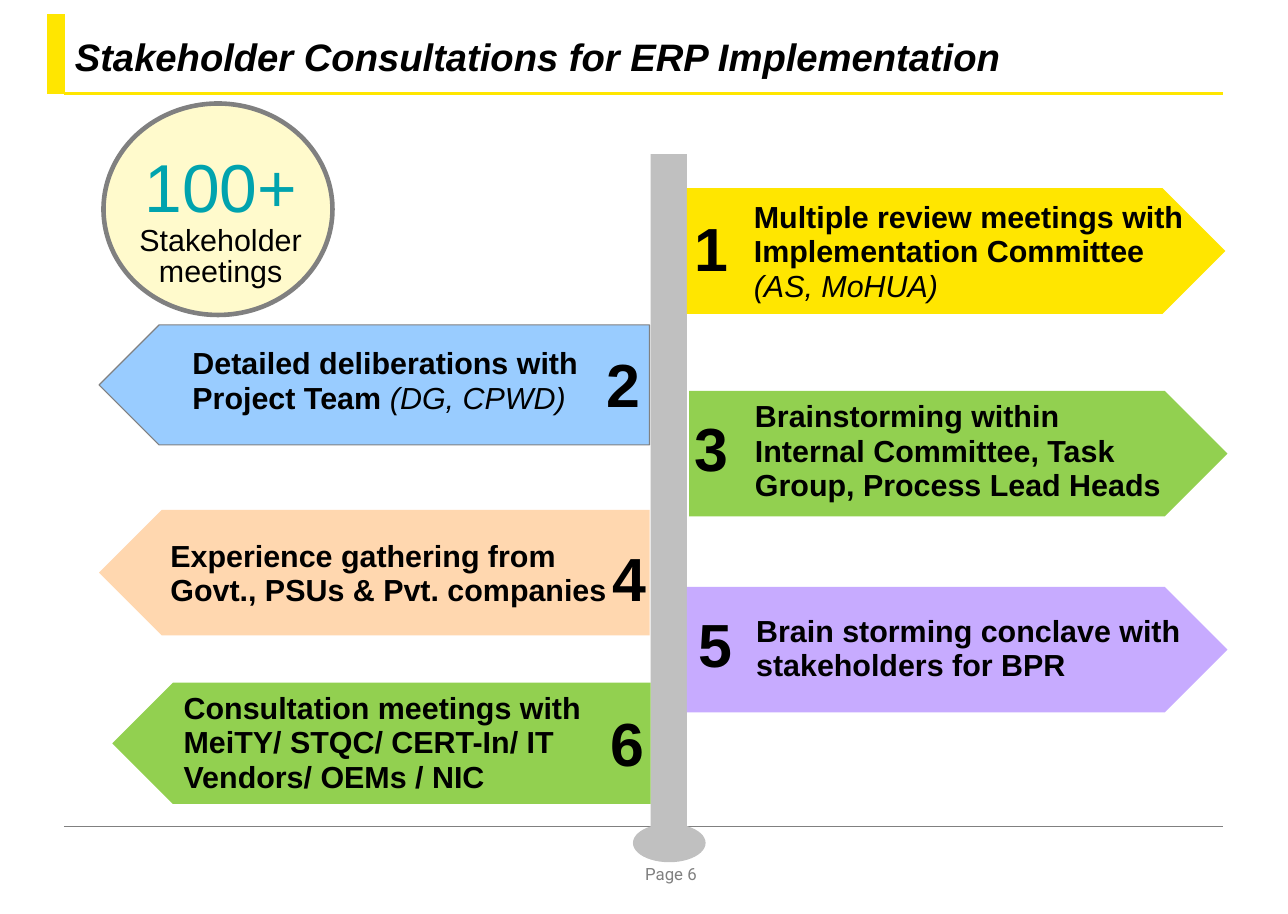
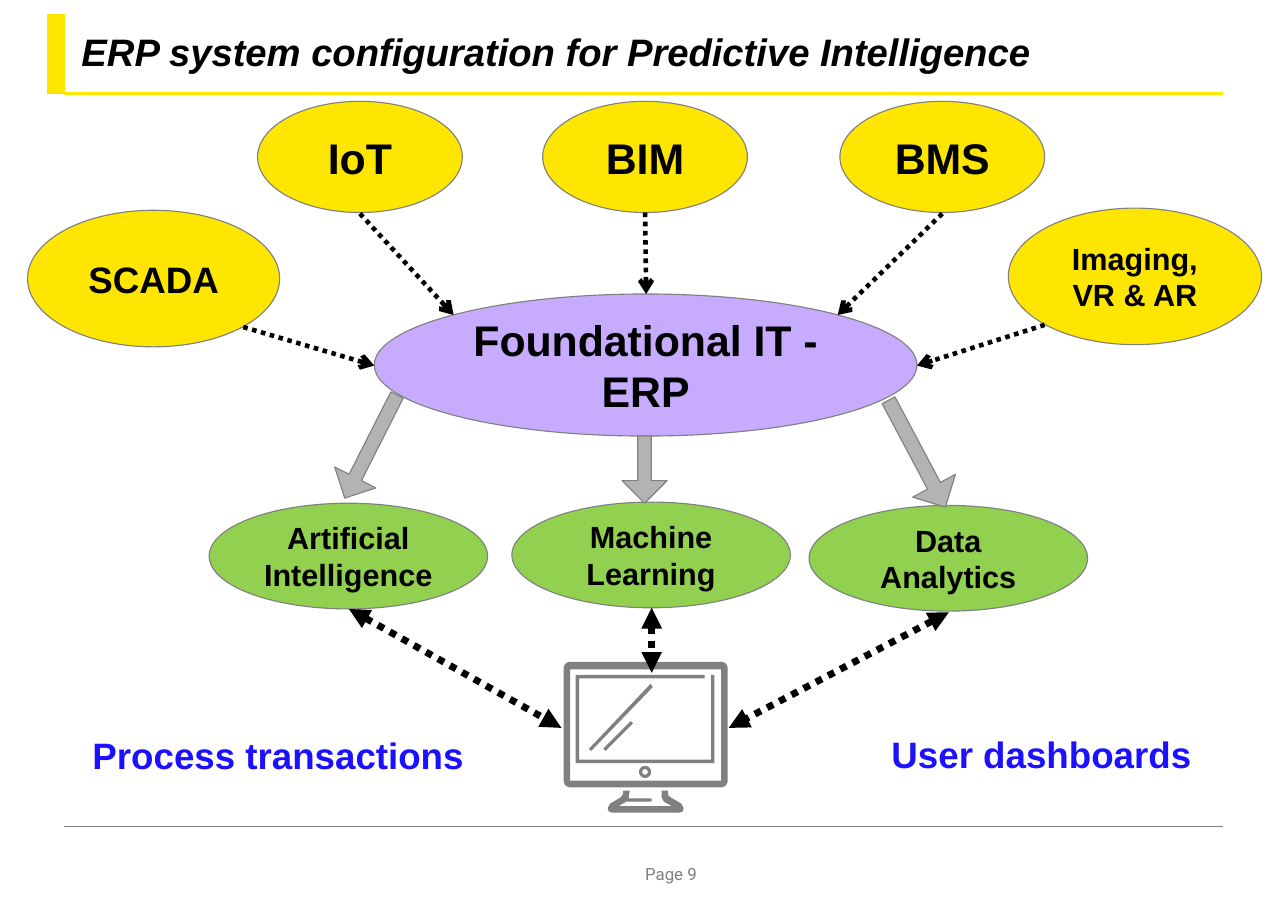
"""Build two ERP slides: stakeholder consultations and predictive intelligence."""
from dataclasses import dataclass
from math import cos, pi, sin

from lxml import etree
from pptx import Presentation
from pptx.dml.color import RGBColor
from pptx.enum.dml import MSO_LINE
from pptx.enum.shapes import MSO_CONNECTOR, MSO_SHAPE
from pptx.enum.text import MSO_ANCHOR, MSO_AUTO_SIZE, PP_ALIGN
from pptx.oxml.ns import qn
from pptx.shapes.autoshape import Shape
from pptx.slide import Slide
from pptx.text.text import TextFrame
from pptx.util import Emu, Inches, Pt

YELLOW = RGBColor(0xFF, 0xE6, 0x00)
CREAM = RGBColor(0xFF, 0xFA, 0xCC)
GREEN = RGBColor(0x92, 0xD0, 0x50)
SKY = RGBColor(0x99, 0xCC, 0xFF)
PEACH = RGBColor(0xFF, 0xD7, 0xAF)
LILAC = RGBColor(0xC7, 0xAB, 0xFF)
TEAL = RGBColor(0x00, 0xA3, 0xAE)
BLUE = RGBColor(0x1C, 0x11, 0xFF)
BLACK = RGBColor(0x00, 0x00, 0x00)
GRAY = RGBColor(0x80, 0x80, 0x80)
SILVER = RGBColor(0xC0, 0xC0, 0xC0)
ARROW_GRAY = RGBColor(0xB3, 0xB3, 0xB3)

OVAL = MSO_SHAPE.OVAL
RECTANGLE = MSO_SHAPE.RECTANGLE
PENTAGON = MSO_SHAPE.PENTAGON
DOWN_ARROW = MSO_SHAPE.DOWN_ARROW
STRAIGHT = MSO_CONNECTOR.STRAIGHT
DOTTED = MSO_LINE.ROUND_DOT
LEFT, CENTER = PP_ALIGN.LEFT, PP_ALIGN.CENTER
TOP, MIDDLE = MSO_ANCHOR.TOP, MSO_ANCHOR.MIDDLE
FIT_SHAPE, NO_FIT = MSO_AUTO_SIZE.SHAPE_TO_FIT_TEXT, MSO_AUTO_SIZE.NONE

SLIDE_WIDTH, SLIDE_HEIGHT = Inches(11.7), Inches(8.3)
COLUMNS = 117
CELL = SLIDE_WIDTH / COLUMNS
DEFAULT_INSETS = (1, 0.5, 1, 0.5)
TIGHT_INSETS = (0, 0.4, 0, 0)
TITLE_INSETS = (1, 1, 1, 1)
NO_INSETS = (0, 0, 0, 0)

Point = tuple[float, float]


@dataclass(frozen=True)
class Area:
    left: float
    top: float
    width: float
    height: float


@dataclass(frozen=True)
class Wording:
    text: str
    size: float
    color: RGBColor = BLACK
    bold: bool = True
    italic: bool = False
    font: str = "Arial"


@dataclass(frozen=True)
class Layout:
    align: PP_ALIGN = LEFT
    spacing: float = 1.0
    after: float = 0
    insets: tuple[float, float, float, float] = DEFAULT_INSETS
    wrap: bool = True
    anchor: MSO_ANCHOR = TOP
    fit: MSO_AUTO_SIZE = FIT_SHAPE


@dataclass(frozen=True)
class Consultation:
    number: str
    color: RGBColor
    plate: Area
    number_at: Point
    text_area: Area
    text: str
    note: str = ""
    outline: float = 0
    points_left: bool = False


@dataclass(frozen=True)
class Bubble:
    text: str
    size: float
    color: RGBColor
    area: Area


@dataclass(frozen=True)
class Link:
    start: Point
    end: Point


TITLE = Layout(spacing=0.85, after=6, insets=TITLE_INSETS, fit=NO_FIT)
PAGE = Layout(insets=NO_INSETS, fit=NO_FIT)
BADGE = Layout(CENTER, 0.85, 6.6, TIGHT_INSETS)
NUMBER = Layout(CENTER, 0.85, 6.6, TIGHT_INSETS, wrap=False)
DETAIL = Layout(spacing=0.95, after=8.8)
BUBBLE = Layout(CENTER, anchor=MIDDLE, fit=NO_FIT)
PROCESS = Layout(spacing=0.85, after=6, insets=TIGHT_INSETS, wrap=False)
DASHBOARD = Layout(spacing=0.85, after=6, wrap=False)

CONSULTATIONS = (
    Consultation("1", YELLOW, Area(62.4, 17.1, 48.9, 11.4), (63.1, 19.7),
                 Area(67.5, 17.7, 43.3, 11.4),
                 "Multiple review meetings with Implementation Committee ", "(AS, MoHUA)"),
    Consultation("2", SKY, Area(9, 29.5, 50, 10.9), (55.1, 32.1),
                 Area(16.5, 31, 38.9, 7.4),
                 "Detailed deliberations with Project Team ", "(DG, CPWD)",
                 outline=0.75, points_left=True),
    Consultation("3", GREEN, Area(62.6, 35.5, 48.9, 11.4), (63.1, 37.9),
                 Area(67.6, 35.8, 39.5, 10.6),
                 "Brainstorming within Internal Committee, Task Group, Process Lead Heads"),
    Consultation("4", PEACH, Area(9, 46.3, 50, 11.4), (55.6, 49.7),
                 Area(14.5, 48.5, 42, 7.4),
                 "Experience gathering from Govt., PSUs & Pvt. companies", points_left=True),
    Consultation("5", LILAC, Area(62.4, 53.3, 49.1, 11.4), (63.4, 55.7),
                 Area(67.7, 55.3, 44.1, 7.4),
                 "Brain storming conclave with stakeholders for BPR"),
    Consultation("6", GREEN, Area(10.2, 62, 48.9, 11), (55.4, 64.7),
                 Area(15.7, 62.3, 39.7, 10.6),
                 "Consultation meetings with MeiTY/ STQC/ CERT-In/ IT Vendors/ OEMs / NIC",
                 points_left=True),
)
BUBBLES = (
    Bubble("Foundational IT - ERP", 28, LILAC, Area(34, 26.7, 49.3, 12.9)),
    Bubble("SCADA", 24, YELLOW, Area(2.5, 19.1, 22.9, 12.4)),
    Bubble("IoT", 28, YELLOW, Area(23.4, 9.2, 18.6, 10.1)),
    Bubble("BIM", 28, YELLOW, Area(49.3, 9.2, 18.6, 10.1)),
    Bubble("BMS", 28, YELLOW, Area(76.3, 9.2, 18.6, 10.1)),
    Bubble("Imaging, VR & AR", 20, YELLOW, Area(91.6, 18.9, 23, 12.4)),
    Bubble("Artificial Intelligence", 20, GREEN, Area(19, 45.7, 25.3, 9.6)),
    Bubble("Machine Learning", 20, GREEN, Area(46.5, 45.6, 25.3, 9.6)),
    Bubble("Data Analytics", 20, GREEN, Area(73.5, 45.9, 25.3, 9.6)),
)
INPUTS = (
    Link((22.1, 29.7), (34, 33.2)),
    Link((32.7, 19.4), (41.2, 28.6)),
    Link((58.6, 19.3), (58.7, 26.7)),
    Link((85.6, 19.4), (76.1, 28.6)),
    Link((94.9, 29.5), (83.3, 33.2)),
)
EXCHANGES = (
    Link((31.7, 55.3), (51, 66.1)),
    Link((86.2, 55.6), (66.2, 66.1)),
    Link((59.2, 55.2), (59.2, 61.1)),
)
OUTPUTS = (
    (Area(56.5, 39.6, 4.1, 6.1), 0),
    (Area(31.6, 35.3, 4.2, 10.5), 26.9),
    (Area(81.1, 35.7, 4.4, 11), 332),
)


def grid(cells: float) -> Emu:
    return Emu(round(cells * CELL))


def box(area: Area) -> tuple[Emu, Emu, Emu, Emu]:
    return grid(area.left), grid(area.top), grid(area.width), grid(area.height)


def write(frame: TextFrame, layout: Layout, *wordings: Wording) -> None:
    frame.word_wrap = layout.wrap
    frame.auto_size = layout.fit
    frame.vertical_anchor = layout.anchor
    (frame.margin_left, frame.margin_top,
     frame.margin_right, frame.margin_bottom) = map(grid, layout.insets)
    paragraph = frame.paragraphs[0]
    paragraph.alignment = layout.align
    paragraph.line_spacing = layout.spacing
    paragraph.space_before = Pt(0)
    paragraph.space_after = Pt(layout.after)
    for wording in wordings:
        run = paragraph.add_run()
        run.text = wording.text
        run.font.name = wording.font
        run.font.size = Pt(wording.size)
        run.font.bold = wording.bold
        run.font.italic = wording.italic
        run.font.color.rgb = wording.color


def add_text(slide: Slide, area: Area, layout: Layout, *wordings: Wording) -> None:
    write(slide.shapes.add_textbox(*box(area)).text_frame, layout, *wordings)


def paint(shape: Shape, color: RGBColor, outline: float = 0) -> None:
    shape.shadow.inherit = False
    shape.fill.solid()
    shape.fill.fore_color.rgb = color
    if outline:
        shape.line.color.rgb = GRAY
        shape.line.width = Pt(outline)
    else:
        shape.line.fill.background()


def add_figure(slide: Slide, kind: MSO_SHAPE, area: Area, color: RGBColor,
               outline: float = 0, turn: float = 0) -> Shape:
    figure = slide.shapes.add_shape(kind, *box(area))
    figure.rotation = turn
    paint(figure, color, outline)
    return figure


def add_line(slide: Slide, link: Link, color: RGBColor, width: float,
             dotted: bool = False, head: str = "", tail: str = "") -> None:
    connector = slide.shapes.add_connector(STRAIGHT, *map(grid, link.start + link.end))
    connector.line.color.rgb = color
    connector.line.width = Pt(width)
    if dotted:
        connector.line.dash_style = DOTTED
    properties = connector._element.spPr
    outline = properties.find(qn("a:ln"))
    for tag, tip in (("a:headEnd", head), ("a:tailEnd", tail)):
        if tip:
            etree.SubElement(outline, qn(tag)).set("type", tip)
    etree.SubElement(properties, qn("a:effectLst"))


def add_framed_slide(deck: Presentation, title: str, title_area: Area, page: str) -> Slide:
    slide = deck.slides.add_slide(deck.slide_layouts[5])
    add_line(slide, Link((5.8, 8.5), (111.1, 8.5)), YELLOW, 1.5)
    add_line(slide, Link((5.8, 75), (111.1, 75)), GRAY, 0.25)
    add_line(slide, Link((5.1, 8.5), (5.1, 1.3)), YELLOW, 12)
    add_text(slide, Area(58.6, 78.4, 7.9, 2.2), PAGE,
             Wording(page, 11, GRAY, bold=False, font="Roboto"))
    heading = slide.shapes.title
    heading.left, heading.top, heading.width, heading.height = box(title_area)
    write(heading.text_frame, TITLE, Wording(title, 25, italic=True))
    return slide


def add_consultation(slide: Slide, item: Consultation) -> None:
    add_figure(slide, PENTAGON, item.plate, item.color, item.outline,
               180 if item.points_left else 0)
    add_text(slide, Area(*item.number_at, 3.1, 6.1), NUMBER, Wording(item.number, 39.8))
    wordings = [Wording(item.text, 19.9)]
    if item.note:
        wordings.append(Wording(item.note, 19.9, bold=False, italic=True))
    add_text(slide, item.text_area, DETAIL, *wordings)


def arc(x: float, y: float, radius: float, start: float, sweep: float, steps: int) -> list[Point]:
    angles = [start + sweep * step / steps for step in range(steps + 1)]
    return [(x + radius * cos(angle), y + radius * sin(angle)) for angle in angles]


def rounded(left: float, top: float, right: float, bottom: float, radius: float) -> list[Point]:
    centers = ((right - radius, bottom - radius), (left + radius, bottom - radius),
               (left + radius, top + radius), (right - radius, top + radius))
    return [point for quarter, (x, y) in enumerate(centers)
            for point in arc(x, y, radius, quarter * pi / 2, pi / 2, 6)]


def add_monitor(slide: Slide) -> None:
    outlines = (
        rounded(51.2, 60.1, 66.1, 71.5, 0.6),
        [(51.8, 60.8), (65.5, 60.8), (65.5, 70.9), (51.8, 70.9)],
        [(64, 61.6), (52.6, 61.6), (52.6, 69), (64.6, 69), (64.6, 61.3), (64.9, 61.3),
         (64.9, 69.3), (52.3, 69.3), (52.3, 61.3), (64, 61.3)],
        [(53.5, 68), (59.1, 62.1), (59.3, 62.4), (53.7, 68.2)],
        [(54.8, 68), (57.3, 65.5), (57.5, 65.7), (55, 68.2)],
        arc(58.6, 70.1, 0.55, 0, 2 * pi, 24),
        arc(58.6, 70.1, 0.25, 0, 2 * pi, 24),
        [(57.1, 72.5), (59.2, 72.5), (59.2, 72.8), (56.9, 72.8), (56.2, 73.2), (61, 73.2),
         (60.3, 72.8), (60.1, 72.4), (60.1, 71.8), (60.7, 71.8), (60.7, 72.2), (60.9, 72.4),
         (61.9, 73), (62.1, 73.4), (62, 73.7), (61.7, 73.8), (55.6, 73.8), (55.3, 73.7),
         (55.2, 73.4), (55.4, 73), (56.4, 72.4), (56.6, 72.1), (56.6, 71.8), (57.2, 71.8)],
    )
    contours = [[(grid(x), grid(y)) for x, y in outline] for outline in outlines]
    builder = slide.shapes.build_freeform(*contours[0][0], scale=1.0)
    for index, contour in enumerate(contours):
        if index:
            builder.move_to(*contour[0])
        builder.add_line_segments(contour[1:], close=True)
    paint(builder.convert_to_shape(), GRAY)


def build_consultations(deck: Presentation) -> None:
    slide = add_framed_slide(deck, "Stakeholder Consultations for ERP Implementation",
                             Area(5.8, 2.7, 105.3, 5.8), "Page 6")
    add_figure(slide, OVAL, Area(9.4, 9.4, 20.8, 19.2), CREAM, 3)
    add_text(slide, Area(9.9, 13.9, 20.3, 11.8), BADGE,
             Wording("100+ ", 44.3, TEAL, bold=False),
             Wording("Stakeholder meetings", 19.9, bold=False))
    add_figure(slide, OVAL, Area(57.5, 74.8, 6.6, 3.5), SILVER)
    add_figure(slide, RECTANGLE, Area(59.1, 14, 3.3, 61.7), SILVER)
    for item in CONSULTATIONS:
        add_consultation(slide, item)


def build_intelligence(deck: Presentation) -> None:
    slide = add_framed_slide(deck, "ERP system configuration for Predictive Intelligence",
                             Area(6.4, 2.2, 108.1, 5.8), "Page 9")
    for bubble in BUBBLES:
        oval = add_figure(slide, OVAL, bubble.area, bubble.color, 0.75)
        write(oval.text_frame, BUBBLE, Wording(bubble.text, bubble.size))
    for link in INPUTS:
        add_line(slide, link, BLACK, 3, dotted=True, tail="arrow")
    for area, turn in OUTPUTS:
        arrow = add_figure(slide, DOWN_ARROW, area, ARROW_GRAY, 0.75, turn)
        arrow.adjustments[0] = 0.3
    add_monitor(slide)
    add_text(slide, Area(8.4, 66.8, 34.1, 3.8), PROCESS, Wording("Process transactions", 24, BLUE))
    add_text(slide, Area(80, 66.6, 29.7, 4.6), DASHBOARD, Wording("User dashboards", 24, BLUE))
    for link in EXCHANGES:
        add_line(slide, link, BLACK, 4.5, dotted=True, head="triangle", tail="triangle")


def main() -> None:
    deck = Presentation()
    deck.slide_width, deck.slide_height = SLIDE_WIDTH, SLIDE_HEIGHT
    build_consultations(deck)
    build_intelligence(deck)
    deck.save("out.pptx")


if __name__ == "__main__":
    main()
